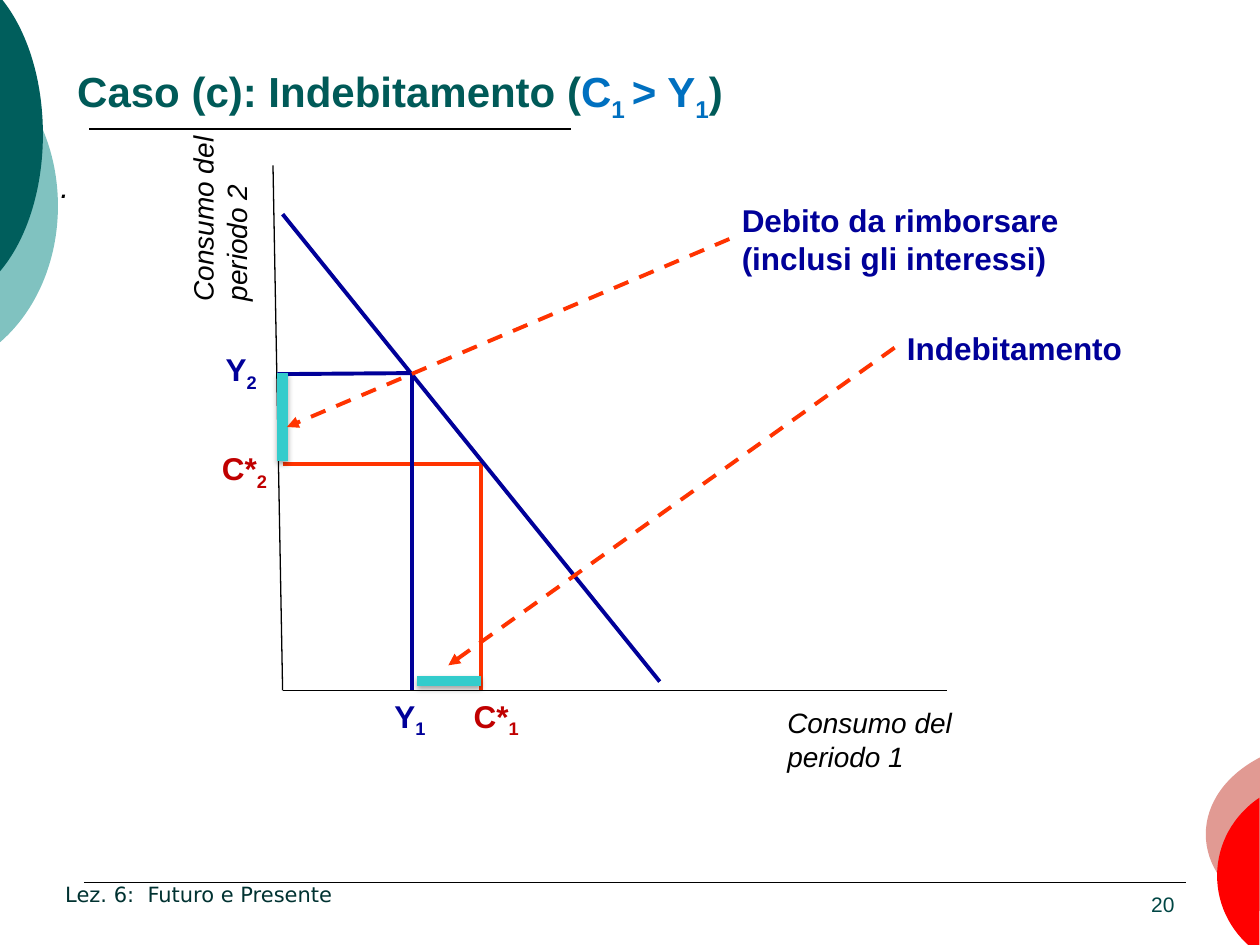
"""Build the slide on borrowing: budget line, endowment, chosen consumption and debt."""
from pptx import Presentation
from pptx import util as u
from pptx.dml.color import RGBColor
from pptx.enum import dml, shapes, text
from pptx.oxml import parse_xml
from pptx.oxml.ns import nsdecls, qn

NAVY, RED, ORANGE, BLACK = "000099", "C00000", "FF3300", "000000"
TEAL, BLUE, AQUA = "005A58", "0070C0", "33CCCC"

TITLE = [("Caso (c): Indebitamento (", TEAL, False), ("C", BLUE, False), ("1 ", BLUE, True),
         ("> Y", BLUE, False), ("1", BLUE, True), (")", TEAL, False)]

# left, top, width, height, cap depth, cap half height, rotation, colour
CAPS = [(-121.7, 22.3, 154.8, 190.8, 33.5, 78.2, 0, "80C2C0"),
        (-91.4, -19.4, 115.9, 192.2, 25.2, 79.2, 0, "005E5C"),
        (689, 423.4, 146.9, 106.6, 31, 43.9, 180, "E19A93"),
        (695.5, 446.4, 110.2, 108, 24.2, 44.6, 180, "FF0000")]

RULES = [((51.1, 73.7), (326.1, 73.7), BLACK, 1), ((48, 504.2), (678, 504.2), BLACK, 0.75)]

ORIGIN = (161.5, 394.5)
ENDOWMENT = (235.4, 213.2)
CHOICE = (275, 265)
LINES = [
    ((156, 94.5), ORIGIN, BLACK, 0.75),
    (ORIGIN, (541.2, ORIGIN[1]), BLACK, 0.75),
    ((ORIGIN[0], CHOICE[1]), CHOICE, ORANGE, 2.25),
    (CHOICE, (CHOICE[0], ORIGIN[1]), ORANGE, 2.25),
    ((ORIGIN[0], 122.4), (377, 389.5), NAVY, 2.25),
    ((158.5, 213.8), ENDOWMENT, NAVY, 2.25),
    ((ENDOWMENT[0], ORIGIN[1]), ENDOWMENT, NAVY, 2.25),
]
GAPS = [((238.3, 389.2), (CHOICE[0], 389.2)), ((ORIGIN[0], 263.5), (ORIGIN[0], ENDOWMENT[1]))]
ARROWS = [((511.2, 198.7), (256.2, 380.2)), ((416.8, 136.6), (164, 244))]

# left, top, width, height, words, subscript, colour
MARKS = [
    (263.5, 394.5, 51, 29, "C*", "1", RED),
    (119.7, 252.9, 53, 29, "C*", "2", RED),
    (218.3, 394.5, 51, 29, "Y", "1", NAVY),
    (121.8, 196.6, 51, 29, "Y", "2", NAVY),
    (511.2, 184.5, 149, 29, "Indebitamento", "", NAVY),
    (416.8, 111.5, 255, 51, "Debito da rimborsare (inclusi gli interessi)", "", NAVY),
]


def color(value):
    return RGBColor.from_string(value)


def points(*values):
    return [u.Pt(value) for value in values]


def write(box, spans, size, name="Arial", bold=False, italic=False,
          align=text.PP_ALIGN.LEFT, anchor=text.MSO_ANCHOR.TOP):
    frame = box.text_frame
    frame.word_wrap = True
    frame.auto_size = text.MSO_AUTO_SIZE.NONE
    frame.vertical_anchor = anchor
    para = frame.paragraphs[0]
    para.alignment = align
    para.font.size, para.font.name = u.Pt(size), name
    para.font.bold, para.font.italic = bold, italic
    for words, tint, lowered in spans:
        span = para.add_run()
        span.text = words
        span.font.color.rgb = color(tint)
        if lowered:
            span._r.get_or_add_rPr().set("baseline", "-25000")


def add_text(page, place, words, size, tint=BLACK, **style):
    box = page.shapes.add_textbox(*points(*place))
    write(box, [(words, tint, False)], size, **style)
    return box


def add_line(page, start, end, tint, width, shadow="", arrow=False):
    line = page.shapes.add_connector(shapes.MSO_CONNECTOR.STRAIGHT, *points(*start, *end))
    line.line.color.rgb = color(tint)
    line.line.width = u.Pt(width)
    if arrow:
        line.line.dash_style = dml.MSO_LINE.DASH
        line.line._get_or_add_ln().append(
            parse_xml(f'<a:tailEnd {nsdecls("a")} type="triangle"/>'))
    line._element.spPr.append(
        parse_xml(f'<a:effectLst {nsdecls("a")}>{shadow}</a:effectLst>'))


def add_cap(page, left, top, width, height, depth, half, rotation, tint):
    base, middle = width - depth, height / 2
    builder = page.shapes.build_freeform(*points(base, middle - half))
    builder.add_line_segments([points(width, middle), points(base, middle + half)], close=True)
    shape = builder.convert_to_shape()
    shape.left, shape.top, shape.width, shape.height = points(left, top, width, height)
    shape.rotation = rotation

    def spot(across, down):
        x, y = points(base + across * depth, middle + down * half)
        return f'<a:pt x="{x}" y="{y}"/>'

    upper = spot(0.63, -0.77) + spot(1, -0.4) + spot(1, 0)
    lower = spot(1, 0.4) + spot(0.63, 0.77) + spot(0, 1)
    curve = parse_xml(
        f'<a:path {nsdecls("a")} w="{shape.width}" h="{shape.height}">'
        f'<a:moveTo>{spot(0, -1)}</a:moveTo><a:cubicBezTo>{upper}</a:cubicBezTo>'
        f'<a:cubicBezTo>{lower}</a:cubicBezTo><a:close/></a:path>')
    outlines = shape._element.spPr.find(qn("a:custGeom")).find(qn("a:pathLst"))
    outlines.replace(outlines[0], curve)
    shape.shadow.inherit = False
    shape.fill.solid()
    shape.fill.fore_color.rgb = color(tint)
    shape.line.fill.background()


def main():
    deck = Presentation()
    deck.slide_width, deck.slide_height = points(720, 540)
    page = deck.slides.add_slide(deck.slide_layouts[5])
    bottom = text.MSO_ANCHOR.BOTTOM

    for cap in CAPS:
        add_cap(page, *cap)
    for rule in RULES:
        add_line(page, *rule)

    title = page.shapes.title
    title.left, title.top, title.width, title.height = points(36.9, 3.6, 576, 70.5)
    write(title, TITLE, 24, bold=True, anchor=bottom)

    add_text(page, (586.8, 491.4, 91.5, 36), "20", 12, "004644",
             align=text.PP_ALIGN.RIGHT, anchor=bottom)
    add_text(page, (30.2, 503.6, 306, 18), "Lez. 6:  Futuro e Presente", 12, "003231",
             name="DejaVu Sans", anchor=bottom)
    body = add_text(page, (27.5, 88.6, 661.5, 408), ".", 18, italic=True)
    body.text_frame.paragraphs[0].space_before = u.Pt(6)
    body.text_frame.paragraphs[0].line_spacing = 1.14

    for line in LINES:
        add_line(page, *line)
    vertical = add_text(page, (102.5, 60.3, 53.3, 119), "Consumo del periodo 2", 16, italic=True)
    vertical.text_frame._txBody.bodyPr.set("vert", "vert270")
    add_text(page, (442.8, 399.8, 121.7, 46), "Consumo del periodo 1", 16, italic=True)

    shadow = ('<a:outerShdw blurRad="39400" dist="22900" dir="5400000" rotWithShape="0">'
              '<a:srgbClr val="000000"><a:alpha val="35000"/></a:srgbClr></a:outerShdw>')
    for start, end in GAPS:
        add_line(page, start, end, AQUA, 6, shadow=shadow)
    for start, end in ARROWS:
        add_line(page, start, end, ORANGE, 2.25, arrow=True)
    for *place, words, index, tint in MARKS:
        box = page.shapes.add_textbox(*points(*place))
        spans = [(words, tint, False)] + ([(index, tint, True)] if index else [])
        write(box, spans, 18, bold=True)

    deck.save("out.pptx")


if __name__ == "__main__":
    main()
